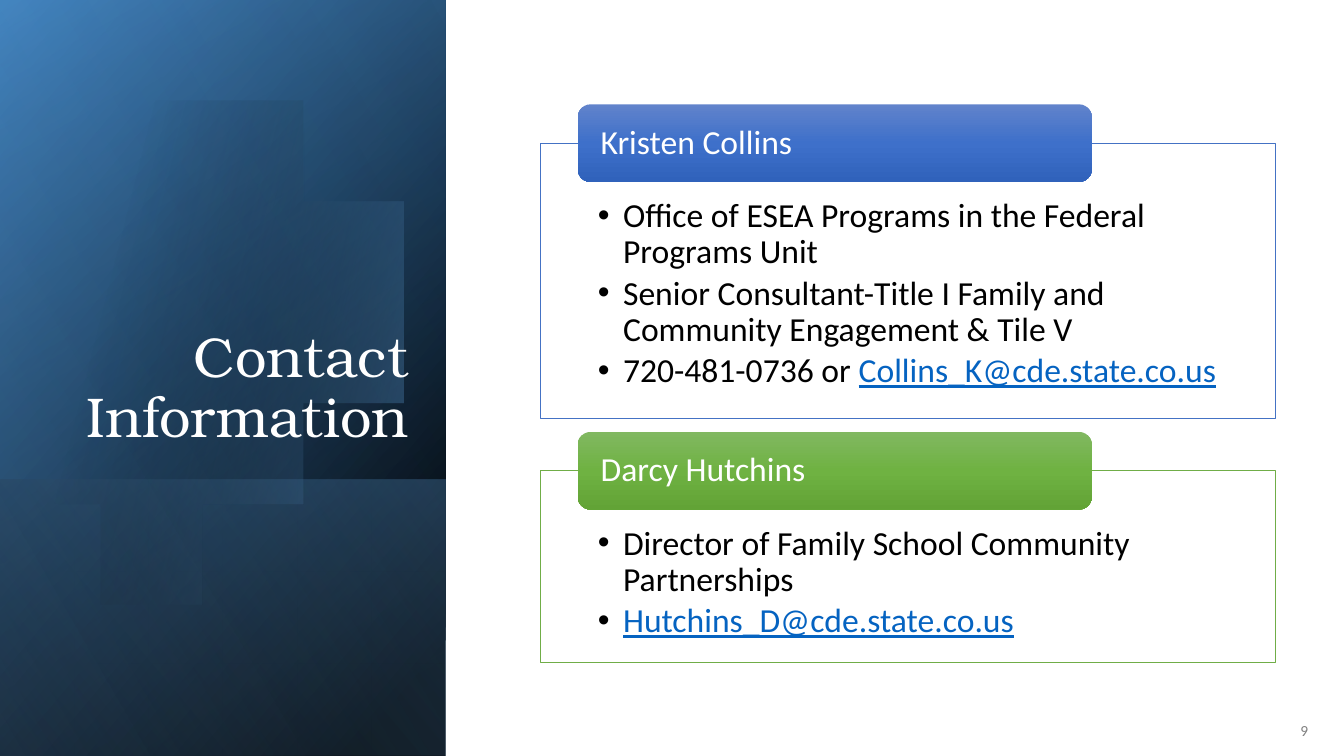
from dataclasses import dataclass

from lxml import etree
from pptx import Presentation
from pptx.dml.color import RGBColor
from pptx.enum.shapes import MSO_SHAPE
from pptx.enum.text import MSO_ANCHOR, PP_ALIGN
from pptx.oxml.ns import qn
from pptx.util import Inches, Pt

RECTANGLE = MSO_SHAPE.RECTANGLE
ROUNDED = MSO_SHAPE.ROUNDED_RECTANGLE
TOP, MIDDLE, BOTTOM = MSO_ANCHOR.TOP, MSO_ANCHOR.MIDDLE, MSO_ANCHOR.BOTTOM
LEFT, RIGHT = PP_ALIGN.LEFT, PP_ALIGN.RIGHT


@dataclass(frozen=True)
class Theme:
    title_font: str = "TeX Gyre Bonum"
    body_font: str = "Calibri"
    title_size: int = 40
    body_size: int = 24
    number_size: int = 11
    white: str = "FFFFFF"
    black: str = "000000"
    gray: str = "808080"
    link: str = "0563C1"
    blue: str = "4472C4"
    green: str = "70AD47"
    sky: str = "5B9BD5"
    pale_sky: str = "9DC3E6"
    deep_sky: str = "2E75B6"


THEME = Theme()


@dataclass(frozen=True)
class Stop:
    position: int
    color: str
    opacity: int = 100


@dataclass(frozen=True)
class Gradient:
    angle: int
    stops: tuple[Stop, ...]


@dataclass(frozen=True)
class Box:
    left: float
    top: float
    width: float
    height: float

    def lengths(self) -> tuple:
        return tuple(Inches(v) for v in (self.left, self.top, self.width, self.height))


@dataclass(frozen=True)
class Bullet:
    text: str
    email: str = ""


@dataclass(frozen=True)
class Contact:
    name: str
    top: float
    height: float
    line_color: str
    header_colors: tuple[str, str, str]
    bullets: tuple[Bullet, ...]


PANEL = Box(-1.54, 1.54, 7.5, 4.42)
PANEL_FOOT = Box(0.84, 3.92, 2.74, 4.42)
PANEL_BASE = (
    (PANEL, Gradient(50, (Stop(8, THEME.black), Stop(100, THEME.deep_sky)))),
    (PANEL, Gradient(30, (Stop(0, THEME.black, 0), Stop(99, THEME.sky, 46)))),
    (PANEL_FOOT, Gradient(130, (Stop(2, THEME.sky, 29), Stop(100, THEME.black, 30)))),
)
PANEL_GLOW = Gradient(120, (Stop(0, THEME.black, 0), Stop(99, THEME.pale_sky, 11)))
DISC_GRADIENT = Gradient(14, (Stop(29, THEME.black, 0), Stop(100, THEME.sky, 43)))
DISC_START = (1.49, 1.1)
# Each segment holds three points for a Bezier curve or one for a straight line.
DISC_SEGMENTS = (
    ((2.46, 1.12), (3.35, 1.77), (3.63, 2.75)),
    ((3.98, 3.97), (3.28, 5.23), (2.07, 5.58)),
    ((1.31, 5.8), (0.53, 5.61), (-0.03, 5.14)),
    ((-0.15, 5.03),),
    ((-0.15, 1.75),),
    ((0, 1.61),),
    ((0.23, 1.42), (0.5, 1.28), (0.8, 1.19)),
    ((1.03, 1.13), (1.26, 1.1), (1.49, 1.1)),
)
CURVE_STEPS = 20

CONTACTS = (
    Contact("Kristen Collins", 1.42, 2.73, THEME.blue, ("6183CB", "3E70CA", "3062BB"), (
        Bullet("Office of ESEA Programs in the Federal Programs Unit"),
        Bullet("Senior Consultant-Title I Family and Community Engagement & Tile V"),
        Bullet("720-481-0736 or ", "Collins_K@cde.state.co.us"),
    )),
    Contact("Darcy Hutchins", 4.67, 1.9, THEME.green, ("81B861", "6FB242", "62A336"), (
        Bullet("Director of Family School Community Partnerships"),
        Bullet("", "Hutchins_D@cde.state.co.us"),
    )),
)


def set_gradient(shape, gradient: Gradient) -> None:
    """Fill with a gradient whose stops may be transparent, and hide the outline."""
    shape.shadow.inherit = False
    shape.line.fill.background()
    shape.fill.background()
    fill = etree.Element(qn("a:gradFill"), rotWithShape="1")
    stop_list = etree.SubElement(fill, qn("a:gsLst"))
    for stop in gradient.stops:
        entry = etree.SubElement(stop_list, qn("a:gs"), pos=str(stop.position * 1000))
        color = etree.SubElement(entry, qn("a:srgbClr"), val=stop.color)
        if stop.opacity < 100:
            etree.SubElement(color, qn("a:alpha"), val=str(stop.opacity * 1000))
    etree.SubElement(fill, qn("a:lin"), ang=str(gradient.angle * 60000), scaled="0")
    properties = shape._element.spPr
    properties.replace(properties.find(qn("a:noFill")), fill)


def add_panel_layer(slide, box: Box, gradient: Gradient) -> None:
    shape = slide.shapes.add_shape(RECTANGLE, *box.lengths())
    shape.rotation = 90
    shape._element.spPr.find(qn("a:xfrm")).set("flipH", "1")
    set_gradient(shape, gradient)


def disc_points() -> list[tuple[float, float]]:
    points = [DISC_START]
    for segment in DISC_SEGMENTS:
        if len(segment) == 1:
            points.append(segment[0])
            continue
        controls = (points[-1], *segment)
        for step in range(1, CURVE_STEPS + 1):
            t = step / CURVE_STEPS
            weights = ((1 - t) ** 3, 3 * t * (1 - t) ** 2, 3 * t * t * (1 - t), t ** 3)
            points.append(tuple(
                sum(w * point[axis] for w, point in zip(weights, controls)) for axis in (0, 1)
            ))
    return points


def add_disc(slide) -> None:
    start, *rest = disc_points()
    builder = slide.shapes.build_freeform(*start, scale=Inches(1))
    builder.add_line_segments(rest, close=True)
    set_gradient(builder.convert_to_shape(), DISC_GRADIENT)


def prepare_frame(shape, anchor, insets: tuple[float, float, float, float]):
    frame = shape.text_frame
    frame.word_wrap = True
    frame.vertical_anchor = anchor
    frame.margin_left, frame.margin_top, frame.margin_right, frame.margin_bottom = map(Inches, insets)
    return frame


def style_paragraph(paragraph, font_name: str, size: int, color: str, alignment=LEFT) -> None:
    paragraph.alignment = alignment
    paragraph.line_spacing = 0.9
    paragraph.font.name = font_name
    paragraph.font.size = Pt(size)
    paragraph.font.color.rgb = RGBColor.from_string(color)


def add_bullet(paragraph, bullet: Bullet) -> None:
    properties = paragraph._p.get_or_add_pPr()
    properties.set("marL", str(Inches(0.25)))
    properties.set("indent", str(-Inches(0.25)))
    bullet_color = etree.SubElement(properties, qn("a:buClr"))
    etree.SubElement(bullet_color, qn("a:srgbClr"), val=THEME.black)
    etree.SubElement(properties, qn("a:buFont"), typeface="Arial")
    etree.SubElement(properties, qn("a:buChar"), char="•")
    style_paragraph(paragraph, THEME.body_font, THEME.body_size, THEME.black)
    paragraph.space_after = Pt(3.6)
    if bullet.text:
        paragraph.add_run().text = bullet.text
    if bullet.email:
        run = paragraph.add_run()
        run.text = bullet.email
        run.font.underline = True
        run.font.color.rgb = RGBColor.from_string(THEME.link)


def add_contact(slide, contact: Contact) -> None:
    card_box = Box(5.36, contact.top, 7.29, contact.height)
    card = slide.shapes.add_shape(RECTANGLE, *card_box.lengths())
    card.shadow.inherit = False
    card.fill.solid()
    card.fill.fore_color.rgb = RGBColor.from_string(THEME.white)
    card.line.color.rgb = RGBColor.from_string(contact.line_color)
    card.line.width = Pt(0.5)
    frame = prepare_frame(card, TOP, (0.57, 0.55, 0.57, 0.19))
    for index, bullet in enumerate(contact.bullets):
        add_bullet(frame.add_paragraph() if index else frame.paragraphs[0], bullet)

    header = slide.shapes.add_shape(ROUNDED, *Box(5.73, contact.top - 0.385, 5.1, 0.77).lengths())
    stops = tuple(Stop(50 * index, color) for index, color in enumerate(contact.header_colors))
    set_gradient(header, Gradient(90, stops))
    paragraph = prepare_frame(header, MIDDLE, (0.19, 0, 0.19, 0)).paragraphs[0]
    paragraph.text = contact.name
    style_paragraph(paragraph, THEME.body_font, THEME.body_size, THEME.white)


def main() -> None:
    presentation = Presentation()
    presentation.slide_width, presentation.slide_height = Inches(13.33), Inches(7.5)
    slide = presentation.slides.add_slide(presentation.slide_layouts[6])
    for box, gradient in PANEL_BASE:
        add_panel_layer(slide, box, gradient)
    add_disc(slide)
    add_panel_layer(slide, PANEL, PANEL_GLOW)

    title = slide.shapes.add_textbox(*Box(0.64, 1.84, 3.41, 2.62).lengths())
    paragraph = prepare_frame(title, BOTTOM, (0, 0, 0, 0)).paragraphs[0]
    paragraph.text = "Contact Information"
    style_paragraph(paragraph, THEME.title_font, THEME.title_size, THEME.white, RIGHT)

    number = slide.shapes.add_textbox(*Box(12.8, 7.06, 0.49, 0.4).lengths())
    paragraph = prepare_frame(number, MIDDLE, (0.1, 0.05, 0.1, 0.05)).paragraphs[0]
    paragraph.text = "9"
    style_paragraph(paragraph, THEME.body_font, THEME.number_size, THEME.gray)

    for contact in CONTACTS:
        add_contact(slide, contact)
    presentation.save("out.pptx")


if __name__ == "__main__":
    main()
